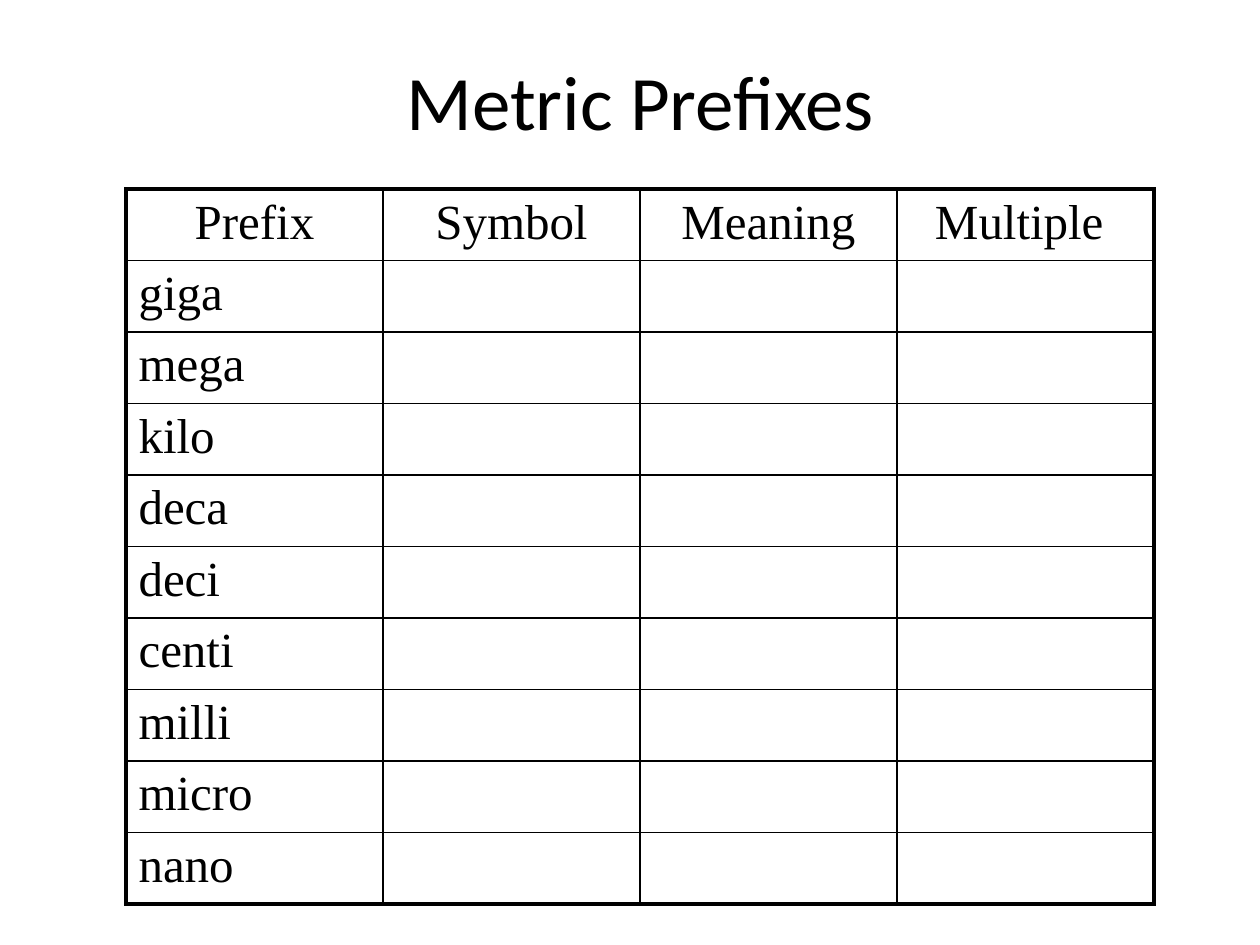
from dataclasses import dataclass

from lxml.etree import SubElement
from pptx import Presentation
from pptx.dml.color import RGBColor
from pptx.enum.text import MSO_ANCHOR as Anchor, PP_ALIGN as Align
from pptx.oxml.ns import qn
from pptx.util import Emu, Pt

PX_PER_INCH = 126
BLACK = RGBColor(0x00, 0x00, 0x00)
THIN, THICK = Pt(1), Pt(2.25)

HEADINGS = ["Prefix", "Symbol", "Meaning", "Multiple "]
PREFIXES = ["giga", "mega", "kilo", "deca", "deci", "centi", "milli", "micro", "nano"]


@dataclass
class TextStyle:
    font: str
    size: int
    align: Align


TITLE = TextStyle("Calibri", 44, Align.CENTER)
HEADING = TextStyle("Times New Roman", 28, Align.CENTER)
ENTRY = TextStyle("Times New Roman", 28, Align.LEFT)


def px(length: int) -> Emu:
    return Emu(round(length * 914400 / PX_PER_INCH))


def write(frame, text: str, style: TextStyle) -> None:
    frame.text = text
    para = frame.paragraphs[0]
    para.alignment = style.align
    for span in para.runs:
        span.font.name = style.font
        span.font.size = Pt(style.size)
        span.font.color.rgb = BLACK


def set_borders(cell, widths: dict[str, int]) -> None:
    properties = cell._tc.get_or_add_tcPr()
    for side, width in widths.items():
        line = SubElement(properties, qn(f"a:ln{side}"), w=str(width))
        fill = SubElement(line, qn("a:solidFill"))
        SubElement(fill, qn("a:srgbClr"), val=str(BLACK))


def draw_title(page) -> None:
    box = page.shapes.add_textbox(px(105), px(21), px(1071), px(158))
    box.text_frame.word_wrap = True
    box.text_frame.vertical_anchor = Anchor.MIDDLE
    write(box.text_frame, "Metric Prefixes", TITLE)


def draw_prefix_table(page) -> None:
    row_count, column_count = len(PREFIXES) + 1, len(HEADINGS)
    column_width, row_height = 257, 66
    table = page.shapes.add_table(
        row_count, column_count, px(126), px(189),
        px(column_width * column_count), px(row_height * row_count)).table
    table.first_row = table.horz_banding = False
    for column in table.columns:
        column.width = px(column_width)
    for row in table.rows:
        row.height = px(row_height)

    # Headings across the top, prefixes down the first column
    for column, heading in enumerate(HEADINGS):
        write(table.cell(0, column).text_frame, heading, HEADING)
    for row, prefix in enumerate(PREFIXES, start=1):
        write(table.cell(row, 0).text_frame, prefix, ENTRY)

    # Thick outer frame, thin inner grid
    for row in range(row_count):
        for column in range(column_count):
            cell = table.cell(row, column)
            set_borders(cell, {
                "L": THICK if column == 0 else THIN,
                "R": THICK if column == column_count - 1 else THIN,
                "T": THICK if row == 0 else THIN,
                "B": THICK if row == row_count - 1 else THIN,
            })
            cell.fill.background()
            cell.margin_left = cell.margin_right = Pt(7.2)
            cell.margin_top = cell.margin_bottom = Pt(3.6)


def main() -> None:
    deck = Presentation()
    deck.slide_width, deck.slide_height = px(1260), px(945)
    page = deck.slides.add_slide(deck.slide_layouts[6])
    draw_title(page)
    draw_prefix_table(page)
    deck.save("out.pptx")


if __name__ == "__main__":
    main()
